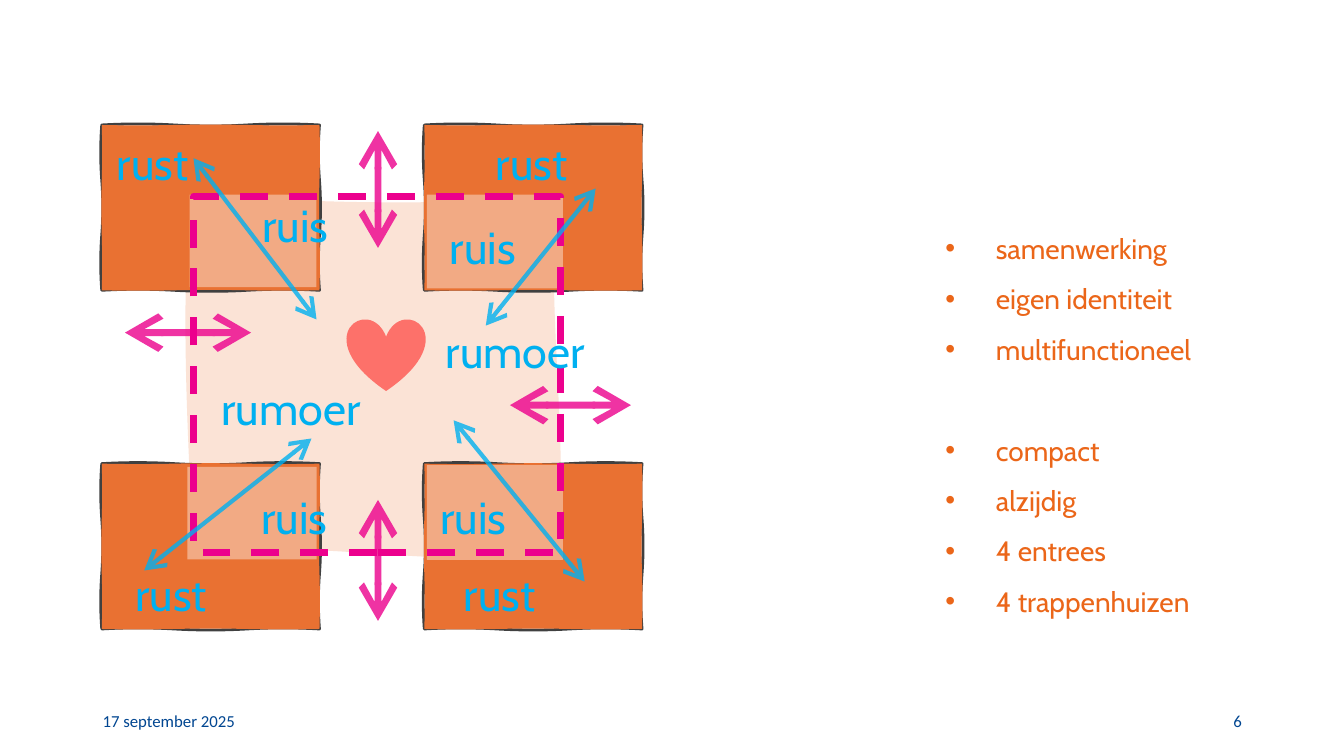
from copy import deepcopy
from dataclasses import dataclass

from lxml import etree
from pptx import Presentation
from pptx.dml.color import RGBColor
from pptx.enum.dml import MSO_LINE
from pptx.enum.shapes import MSO_CONNECTOR, MSO_SHAPE
from pptx.enum.text import MSO_ANCHOR, MSO_AUTO_SIZE, PP_ALIGN
from pptx.oxml.ns import qn
from pptx.util import Pt

DASH = MSO_LINE.DASH
STRAIGHT = MSO_CONNECTOR.STRAIGHT
RECTANGLE, HEART = MSO_SHAPE.RECTANGLE, MSO_SHAPE.HEART
TOP, MIDDLE = MSO_ANCHOR.TOP, MSO_ANCHOR.MIDDLE
LEFT, RIGHT = PP_ALIGN.LEFT, PP_ALIGN.RIGHT
FIT_SHAPE = MSO_AUTO_SIZE.SHAPE_TO_FIT_TEXT

ORANGE, PALE, OVERLAP = "E97132", "FBE3D6", "F2AA84"
PINK, BLUE, NAVY, INK = "EC008D", "00B0F0", "014691", "404040"
LIST_ORANGE, RED = "EB6619", "FF0000"
BLOCK_WIDTH, BLOCK_HEIGHT = 155.5, 118.1
UNITS = 100  # outline units in a point

Point = tuple[float, float]
Curve = tuple[Point, Point, Point]  # two control points and the end


@dataclass
class Area:
    left: float
    top: float
    width: float
    height: float


@dataclass
class Label:
    text: str
    left: float
    top: float
    width: float = 97.2


@dataclass
class Arrow:
    start: Point
    end: Point
    color: str
    weight: float


BLOCKS = [Area(x, y, BLOCK_WIDTH, BLOCK_HEIGHT) for y in (89.3, 331.2) for x in (72.7, 303.1)]
OVERLAPS = [
    Area(135.4, 139, 90.7, 66.2), Area(304.9, 139, 97.2, 67),
    Area(133.9, 333.4, 92.2, 66.2), Area(304.9, 332.3, 97.2, 67.7),
]
COURT_START = (138.2, 137.5)
COURT_SIDES = [
    ((216.7, 146.9), (362.9, 146.9), (398.9, 137.5)),
    ((388.8, 208.8), (406.1, 307.4), (398.9, 396)),
    ((299.5, 406.1), (225.4, 383.8), (138.2, 396)),
    ((136.8, 355.7), (126, 200.9), COURT_START),
]
ARROWS = [
    Arrow((226.1, 228.2), (138.2, 113), BLUE, 3),
    Arrow((347, 232.6), (425.5, 134.6), BLUE, 3),
    Arrow((324, 300.2), (417.6, 415.4), BLUE, 3),
    Arrow((222.5, 313.2), (103, 407.5), BLUE, 3),
    Arrow((179.3, 237.6), (89.3, 237.6), PINK, 5),
    Arrow((270, 177.1), (270, 93.6), PINK, 5),
    Arrow((270, 443.5), (270, 357.1), PINK, 5),
    Arrow((450.7, 289.4), (364.3, 289.4), PINK, 5),
]
LABELS = [
    Label("rust", 76.3, 93.6), Label("rust", 347, 93.6),
    Label("ruis", 180.3, 137.5), Label("ruis", 314.2, 153.4),
    Label("rumoer", 311.3, 227.9, 139.7), Label("rumoer", 151.2, 268.6, 133.2),
    Label("ruis", 179.6, 345.9), Label("ruis", 307.4, 345.9),
    Label("rust", 89.6, 401), Label("rust", 324.3, 401),
]
QUALITIES = [
    ["samenwerking", "eigen identiteit", "multifunctioneel"],
    ["compact", "alzijdig", "4 entrees", "4 trappenhuizen"],
]


def rgb(color: str) -> RGBColor:
    return RGBColor.from_string(color)


def set_alpha(fill_parent, percent: int) -> None:
    color = next(fill_parent.iter(qn("a:srgbClr")))
    etree.SubElement(color, qn("a:alpha"), val=str(percent * 1000))


def style(shape, fill: str = "", line: str = "", weight: float = 0) -> None:
    shape.shadow.inherit = False
    if fill:
        shape.fill.solid()
        shape.fill.fore_color.rgb = rgb(fill)
    else:
        shape.fill.background()
    if line:
        shape.line.color.rgb = rgb(line)
        shape.line.width = Pt(weight)
    else:
        shape.line.fill.background()


def add_preset(page, kind, area: Area):
    return page.shapes.add_shape(
        kind, Pt(area.left), Pt(area.top), Pt(area.width), Pt(area.height))


def bend(outline, origin: Point, curves: list[Curve]) -> None:
    """Turn the straight segments of an outline into the given curves."""
    for segment, curve in zip(outline.findall(qn("a:lnTo")), curves):
        segment.tag = qn("a:cubicBezTo")
        segment.clear()
        for x, y in curve:
            etree.SubElement(segment, qn("a:pt"), x=str(round((x - origin[0]) * UNITS)),
                             y=str(round((y - origin[1]) * UNITS)))


def add_sketch(page, start: Point, fill_curves: list[Curve], line_curves: list[Curve]):
    """Add a curved shape; its line, if any, lies under its fill."""
    builder = page.shapes.build_freeform(
        round(start[0] * UNITS), round(start[1] * UNITS), scale=Pt(1) / UNITS)
    builder.add_line_segments(
        [(round(curve[2][0] * UNITS), round(curve[2][1] * UNITS)) for curve in fill_curves])
    shape = builder.convert_to_shape()
    body = next(shape._element.iter(qn("a:path")))
    if line_curves:
        edge = deepcopy(body)
        edge.set("fill", "none")
        body.set("stroke", "0")
        body.addprevious(edge)
        bend(edge, start, line_curves)
    bend(body, start, fill_curves)
    return shape


def wobble(area: Area, swing: float, parts: int = 3) -> list[Curve]:
    """Sides of a rectangle that sway like a hand-drawn line."""
    right, bottom = area.left + area.width, area.top + area.height
    corners = [(area.left, area.top), (right, area.top), (right, bottom), (area.left, bottom)]
    curves = []
    for index, (x, y) in enumerate(corners):
        end_x, end_y = corners[(index + 1) % 4]
        for part in range(parts):
            sway = swing * (-1) ** part
            across, down = (0, sway) if index % 2 == 0 else (sway, 0)
            points = []
            for third, factor in ((1, 1), (2, 1), (3, 0)):
                t = (part + third / 3) / parts
                points.append((x + (end_x - x) * t + across * factor,
                               y + (end_y - y) * t + down * factor))
            curves.append(tuple(points))
    return curves


def add_arrow(page, arrow: Arrow) -> None:
    connector = page.shapes.add_connector(STRAIGHT, *map(Pt, arrow.start + arrow.end))
    connector.line.color.rgb = rgb(arrow.color)
    connector.line.width = Pt(arrow.weight)
    line = connector.line._ln
    set_alpha(line, 80)
    for end in ("a:headEnd", "a:tailEnd"):
        etree.SubElement(line, qn(end), type="arrow", w="lg", len="lg")
    etree.SubElement(connector._element.spPr, qn("a:effectLst"))


def add_box(page, area: Area, anchor=TOP):
    box = page.shapes.add_textbox(
        Pt(area.left), Pt(area.top), Pt(area.width), Pt(area.height))
    box.text_frame.word_wrap = True
    box.text_frame.vertical_anchor = anchor
    return box.text_frame


def write(para, text: str, font: str, size: float, color: str, align=LEFT) -> None:
    para.text = text
    para.alignment = align
    para.font.name = font
    para.font.size = Pt(size)
    para.font.color.rgb = rgb(color)


def add_qualities(page) -> None:
    frame = add_box(page, Area(668.2, 149.8, 291.6, 293.8))
    frame.auto_size = FIT_SHAPE
    for group_index, group in enumerate(QUALITIES):
        for index, text in enumerate(group):
            first = group_index == index == 0
            para = frame.paragraphs[0] if first else frame.add_paragraph()
            para.line_spacing = 1.5
            if group_index and index == 0:
                para.space_before = Pt(36)
            properties = para._p.get_or_add_pPr()
            properties.set("marL", str(Pt(36)))
            properties.set("indent", str(Pt(-36)))
            etree.SubElement(properties, qn("a:buFont"), typeface="Arial")
            etree.SubElement(properties, qn("a:buChar"), char="•")
            write(para, text, "Cabin", 20, LIST_ORANGE)


def main() -> None:
    deck = Presentation()
    deck.slide_width, deck.slide_height = Pt(960), Pt(540)
    page = deck.slides.add_slide(deck.slide_layouts[6])
    # Footer
    for text, left, align in (("17 september 2025", 66.2, LEFT), ("6", 678.2, RIGHT)):
        frame = add_box(page, Area(left, 500.4, 216, 28.8), MIDDLE)
        write(frame.paragraphs[0], text, "Calibri", 12, NAVY, align)
    # Court, corner blocks and heart
    style(add_sketch(page, COURT_START, COURT_SIDES, []), PALE)
    for block in BLOCKS:
        sketch = add_sketch(page, (block.left, block.top), wobble(block, 0.4), wobble(block, -1))
        style(sketch, ORANGE, INK, 2)
    heart = add_preset(page, HEART, Area(247.7, 227.5, 56.2, 51.8))
    style(heart, RED)
    set_alpha(heart._element.spPr, 50)
    # Overlaps and dashed boundary
    for overlap in OVERLAPS:
        style(add_preset(page, RECTANGLE, overlap), OVERLAP)
    boundary = add_preset(page, RECTANGLE, Area(138.2, 140.4, 262.4, 254.5))
    style(boundary, line=PINK, weight=5)
    boundary.line.dash_style = DASH
    # Arrows, labels and list
    for arrow in ARROWS:
        add_arrow(page, arrow)
    for label in LABELS:
        frame = add_box(page, Area(label.left, label.top, label.width, 46.1))
        frame.auto_size = FIT_SHAPE
        write(frame.paragraphs[0], label.text, "Cabin", 32, BLUE)
    add_qualities(page)
    deck.save("out.pptx")


if __name__ == "__main__":
    main()
